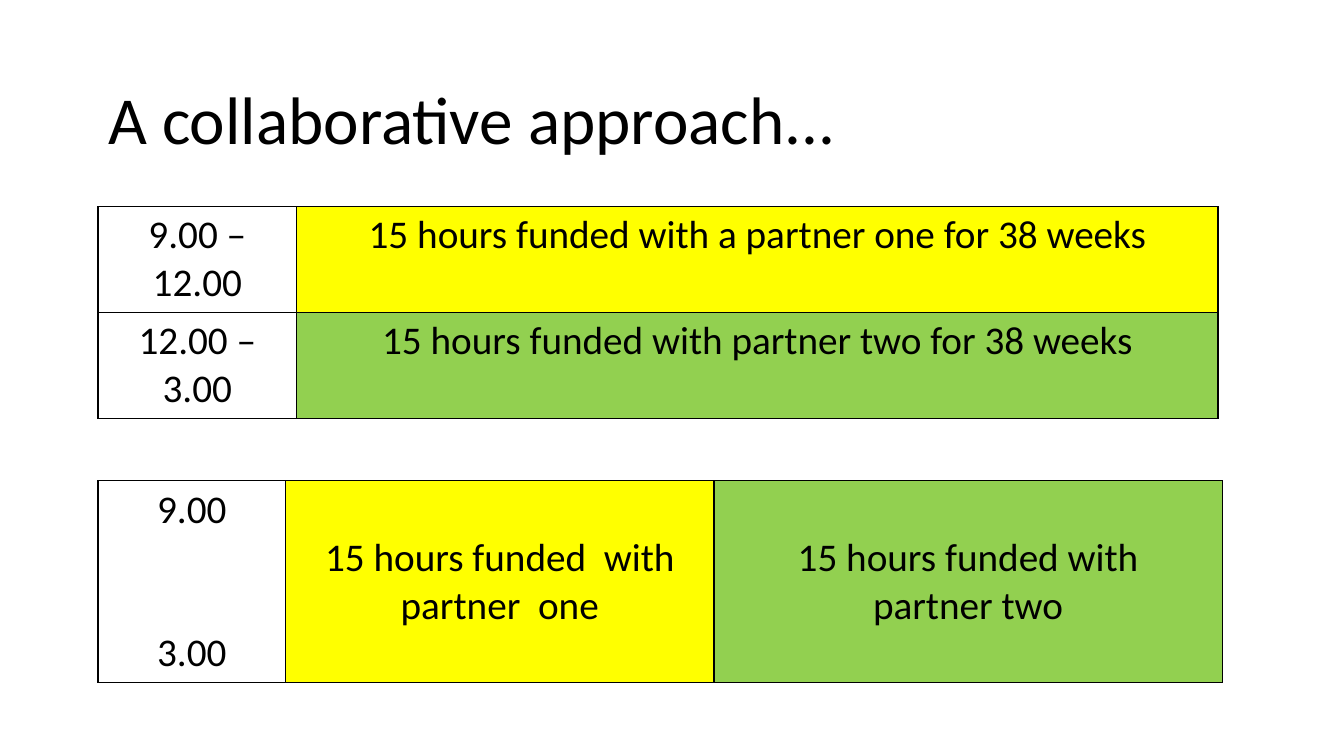
from dataclasses import dataclass

from lxml.etree import SubElement
from pptx import Presentation
from pptx.dml.color import RGBColor
from pptx.enum.text import MSO_ANCHOR, PP_ALIGN
from pptx.oxml.ns import qn
from pptx.util import Pt


@dataclass(frozen=True)
class Theme:
    font: str = "Calibri"
    title_size: int = 48
    body_size: int = 28
    line_width: int = 1
    ink: str = "000000"
    time: str = "FFFFFF"
    partner_one: str = "FFFF00"
    partner_two: str = "92D050"


THEME = Theme()
LEFT = 70
ROW_HEIGHT = 75.6
DAY_HEIGHT = 144
# Space that sets the end of the day apart from its start
DAY_GAP = 68.4


def format_runs(paragraph, size):
    for run in paragraph.runs:
        run.font.name = THEME.font
        run.font.size = Pt(size)
        run.font.color.rgb = RGBColor.from_string(THEME.ink)


def add_borders(cell):
    properties = cell._tc.get_or_add_tcPr()
    for side in ("lnL", "lnR", "lnT", "lnB"):
        border = SubElement(properties, qn(f"a:{side}"), w=str(Pt(THEME.line_width)))
        fill = SubElement(border, qn("a:solidFill"))
        SubElement(fill, qn("a:srgbClr"), val=THEME.ink)


def fill_cell(cell, lines, color, anchor, gap):
    add_borders(cell)
    cell.fill.solid()
    cell.fill.fore_color.rgb = RGBColor.from_string(color)
    cell.margin_left = cell.margin_right = Pt(9.4)
    cell.margin_top = cell.margin_bottom = Pt(3.6)
    cell.vertical_anchor = anchor
    cell.text_frame.text = "\n".join(lines)
    for index, paragraph in enumerate(cell.text_frame.paragraphs):
        paragraph.alignment = PP_ALIGN.CENTER
        if index:
            paragraph.space_before = Pt(gap)
        format_runs(paragraph, THEME.body_size)


def add_schedule(slide, left, top, widths, row_height, rows):
    """Each cell is (lines, colour, anchor, gap between lines)."""
    frame = slide.shapes.add_table(
        len(rows), len(widths), Pt(left), Pt(top),
        Pt(sum(widths)), Pt(row_height * len(rows)))
    schedule = frame.table
    schedule.first_row = schedule.horz_banding = False
    for column, width in zip(schedule.columns, widths):
        column.width = Pt(width)
    for r, row in enumerate(rows):
        schedule.rows[r].height = Pt(row_height)
        for c, content in enumerate(row):
            fill_cell(schedule.cell(r, c), *content)


def add_title(slide, left, top, width, height):
    title = slide.shapes.title
    title.left, title.top = Pt(left), Pt(top)
    title.width, title.height = Pt(width), Pt(height)
    title.text_frame.text = "A collaborative approach..."
    title.text_frame.vertical_anchor = MSO_ANCHOR.MIDDLE
    heading = title.text_frame.paragraphs[0]
    heading.alignment = PP_ALIGN.LEFT
    format_runs(heading, THEME.title_size)


def build_slide(presentation):
    slide = presentation.slides.add_slide(presentation.slide_layouts[5])
    add_title(slide, LEFT, 39, 880, 90)

    # Day split between partners: one row per session
    top, middle = MSO_ANCHOR.TOP, MSO_ANCHOR.MIDDLE
    sessions = [
        ("9.00 – 12.00", "15 hours funded with a partner one for 38 weeks", THEME.partner_one),
        ("12.00 – 3.00", "15 hours funded with partner two for 38 weeks", THEME.partner_two),
    ]
    add_schedule(slide, LEFT, 147.6, [142, 658], ROW_HEIGHT, [
        [([hours], THEME.time, top, 0), ([funding], color, top, 0)]
        for hours, funding, color in sessions])

    # Whole days with each partner: one column per partner
    add_schedule(slide, LEFT, 343.5, [134, 306, 363], DAY_HEIGHT, [[
        (["9.00", "3.00"], THEME.time, top, DAY_GAP),
        (["15 hours funded  with partner  one"], THEME.partner_one, middle, 0),
        (["15 hours funded with", "partner two"], THEME.partner_two, middle, 0),
    ]])


def main():
    presentation = Presentation()
    presentation.slide_width, presentation.slide_height = Pt(960), Pt(540)
    build_slide(presentation)
    presentation.save("out.pptx")


if __name__ == "__main__":
    main()
